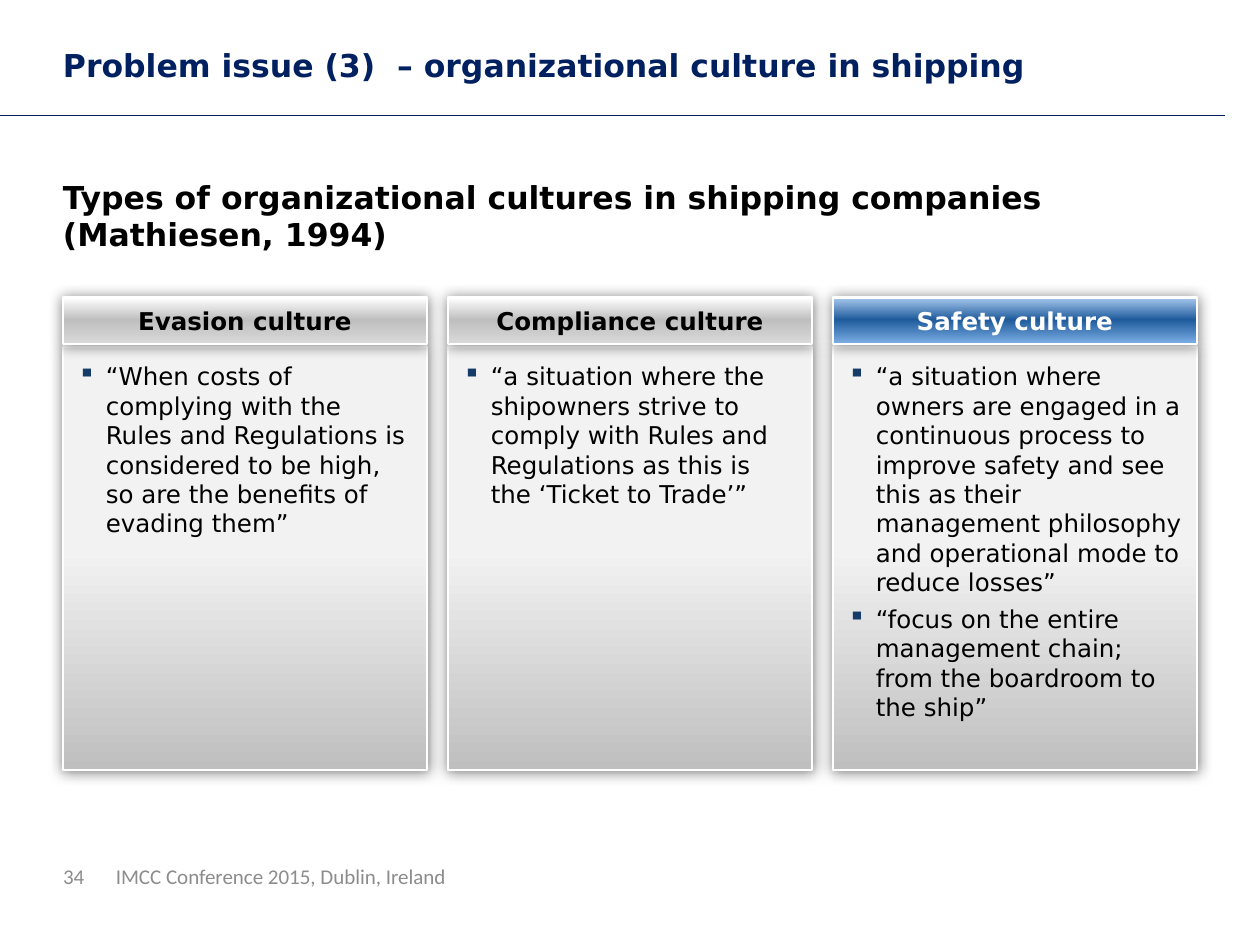
from dataclasses import dataclass

from pptx import Presentation
from pptx.dml.color import RGBColor as RGB
from pptx.enum.shapes import MSO_CONNECTOR as CONN, MSO_SHAPE as SHAPE
from pptx.enum.text import MSO_ANCHOR as ANCHOR, MSO_AUTO_SIZE as AUTO, PP_ALIGN as ALIGN
from pptx.oxml import parse_xml
from pptx.oxml.ns import nsdecls, qn
from pptx.util import Pt


@dataclass(frozen=True)
class Theme:
    """Colours, fonts and type sizes of the slide."""
    navy: str = "002060"
    black: str = "000000"
    white: str = "FFFFFF"
    grey: str = "8C8C8C"
    bullet: str = "153C68"
    panel: tuple = ((48, "F2F2F2"), (100, "BFBFBF"))
    silver: tuple = ((0, "FFFFFF"), (48, "BFBFBF"), (100, "D9D9D9"))
    blue: tuple = ((0, "A8C9EE"), (48, "1F5B9C"), (100, "7DAFE5"))
    font: str = "DejaVu Sans"
    footer_font: str = "Calibri"
    title: int = 18
    body: int = 14
    footer: int = 12


T = Theme()
LEFT, COL_W, PITCH = 36, 208, 220
COLUMNS = [
    ("Evasion culture", T.silver, T.black, [
        "“When costs of complying with the Rules and Regulations is considered "
        "to be high, so are the benefits of evading them”"]),
    ("Compliance culture", T.silver, T.black, [
        "“a situation where the shipowners strive to comply with Rules and "
        "Regulations as this is the ‘Ticket to Trade’”"]),
    ("Safety culture", T.blue, T.white, [
        "“a situation where owners are engaged in a continuous process to improve "
        "safety and see this as their management philosophy and operational mode "
        "to reduce losses”",
        "“focus on the entire management chain; from the boardroom to the ship”"]),
]


def element(xml):
    """Parse a fragment whose root is in the drawing namespace."""
    head, sep, tail = xml.partition(" ")
    return parse_xml(f"{head} {nsdecls('a')}{sep}{tail}")


def set_frame(tf, inset, anchor):
    """Set wrapping, margins and vertical anchor of a text frame."""
    tf.word_wrap = True
    tf.margin_left = tf.margin_top = tf.margin_right = tf.margin_bottom = Pt(inset)
    tf.vertical_anchor = anchor


def style(p, size, color, bold=False, font=T.font):
    """Format every run of a paragraph."""
    for r in p.runs:
        r.font.name, r.font.size, r.font.bold = font, Pt(size), bold
        r.font.color.rgb = RGB.from_string(color)


def add_text(s, box, text, size, color, bold=False, font=T.font, anchor=ANCHOR.TOP):
    """Add a text box without margins."""
    tf = s.shapes.add_textbox(*map(Pt, box)).text_frame
    set_frame(tf, 0, anchor)
    if anchor == ANCHOR.TOP:
        tf.auto_size = AUTO.SHAPE_TO_FIT_TEXT
    tf.text = text
    style(tf.paragraphs[0], size, color, bold, font)


def add_panel(s, box, stops):
    """Add a white-edged rectangle with a vertical gradient and a soft shadow."""
    sp = s.shapes.add_shape(SHAPE.RECTANGLE, *map(Pt, box))
    sp.fill.gradient()
    sp.fill.gradient_angle = 270
    gs_list = sp.fill._xPr.find(qn("a:gradFill")).find(qn("a:gsLst"))
    for gs in list(gs_list):
        gs_list.remove(gs)
    for pos, color in stops:
        gs_list.append(element(
            f'<a:gs pos="{pos * 1000}"><a:srgbClr val="{color}"/></a:gs>'))
    sp.line.color.rgb = RGB.from_string(T.white)
    sp.line.width = Pt(1.5)
    sp.shadow.inherit = False
    sp.element.spPr.find(qn("a:effectLst")).append(element(
        f'<a:outerShdw blurRad="{Pt(8)}" dist="0" dir="0" algn="ctr" rotWithShape="0">'
        f'<a:srgbClr val="{T.black}"><a:alpha val="50000"/></a:srgbClr></a:outerShdw>'))
    return sp


def add_header(s, x, text, stops, color):
    """Add the heading bar of a column."""
    tf = add_panel(s, (x, 170, COL_W, 26.6), stops).text_frame
    set_frame(tf, 0, ANCHOR.MIDDLE)
    tf.text = text
    p = tf.paragraphs[0]
    p.alignment = ALIGN.CENTER
    style(p, T.body, color, bold=True)


def add_quotes(s, x, quotes):
    """Add the bulleted panel of a column."""
    tf = add_panel(s, (x, 198, COL_W, 242), T.panel).text_frame
    set_frame(tf, 8.5, ANCHOR.TOP)
    tf.text = "\n".join(quotes)
    for i, p in enumerate(tf.paragraphs):
        p.alignment = ALIGN.LEFT
        p.space_before = Pt(4 if i else 0)
        pPr = p._p.get_or_add_pPr()
        pPr.set("marL", str(Pt(16)))
        pPr.set("indent", str(-Pt(16)))
        pPr.append(element(f'<a:buClr ><a:srgbClr val="{T.bullet}"/></a:buClr>'))
        pPr.append(element('<a:buChar char="▪"/>'))
        style(p, T.body, T.black)


def add_rule(s, y, width):
    """Add the horizontal line below the title."""
    ln = s.shapes.add_connector(CONN.STRAIGHT, 0, Pt(y), Pt(width), Pt(y))
    ln.line.color.rgb = RGB.from_string(T.navy)
    ln.line.width = Pt(1)
    ln.element.spPr.append(element("<a:effectLst />"))


def main():
    """Build the slide and save it."""
    prs = Presentation()
    prs.slide_width, prs.slide_height = Pt(720), Pt(540)
    s = prs.slides.add_slide(prs.slide_layouts[6])
    for i, (name, stops, color, quotes) in enumerate(COLUMNS):
        x = LEFT + i * PITCH
        add_quotes(s, x, quotes)
        add_header(s, x, name, stops, color)
    add_text(s, (LEFT, 26.6, 648, 21.6),
             "Problem issue (3)  – organizational culture in shipping",
             T.title, T.navy, bold=True)
    add_text(s, (LEFT, 101.5, 648, 44),
             "Types of organizational cultures in shipping companies (Mathiesen, 1994)",
             T.title, T.black, bold=True)
    for x, w, text in ((66.2, 432, "IMCC Conference 2015, Dublin, Ireland"),
                       (LEFT, 30.2, "34")):
        add_text(s, (x, 486, w, 28.8), text, T.footer, T.grey,
                 font=T.footer_font, anchor=ANCHOR.MIDDLE)
    add_rule(s, 66, 700)
    prs.save("out.pptx")


if __name__ == "__main__":
    main()
